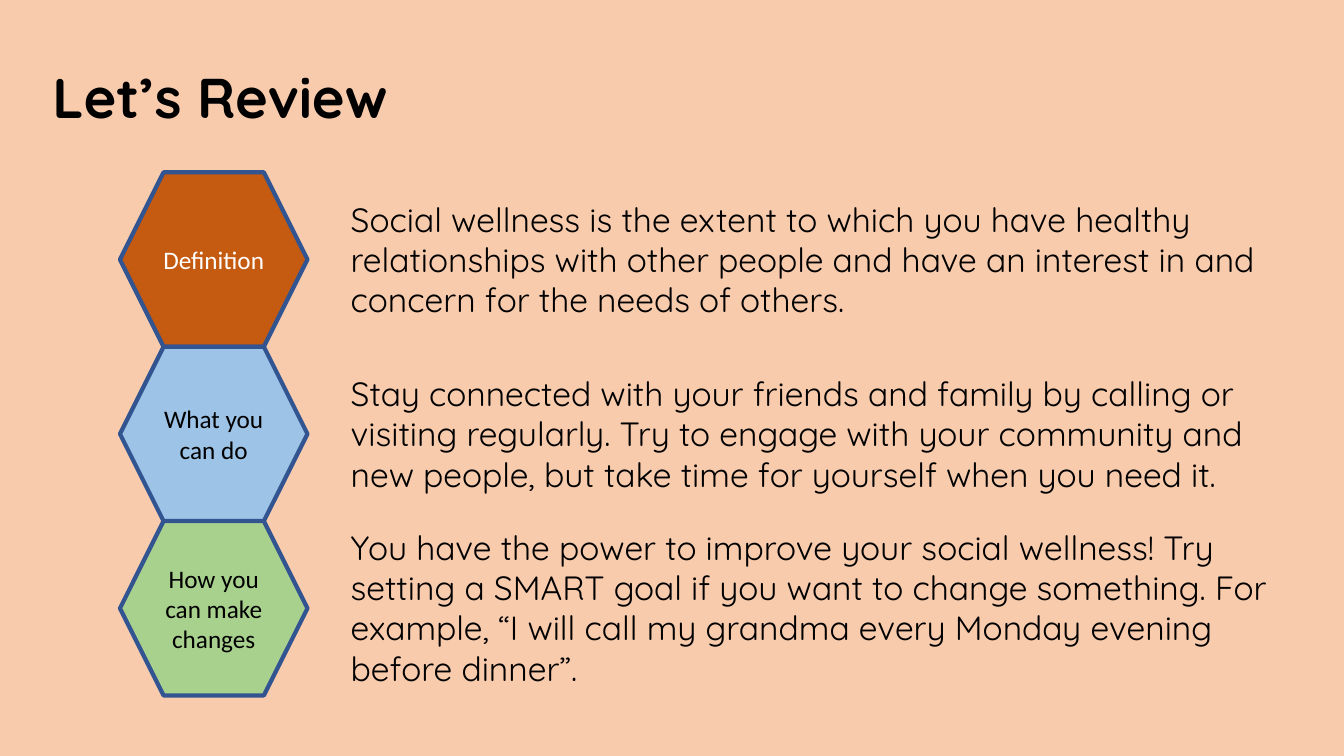
from pptx import Presentation
from pptx import util as u
from pptx.dml.color import RGBColor
from pptx.enum import shapes, text

COLORS = {
    "background": "F8CBAD",
    "outline": "325491",
    "orange": "C55A11",
    "blue": "9DC3E6",
    "green": "A9D18E",
    "black": "000000",
    "white": "FFFFFF",
}


def write_text(shape, content, size, font="Quicksand", color="black", bold=False,
               align=text.PP_ALIGN.LEFT, anchor=text.MSO_ANCHOR.TOP):
    frame = shape.text_frame
    frame.word_wrap = True
    frame.auto_size = text.MSO_AUTO_SIZE.NONE
    frame.vertical_anchor = anchor
    paragraph = frame.paragraphs[0]
    paragraph.alignment = align
    paragraph.line_spacing = 1.0
    run = paragraph.add_run()
    run.text = content
    run.font.name = font
    run.font.size = u.Pt(size)
    run.font.bold = bold
    run.font.color.rgb = RGBColor.from_string(COLORS[color])


presentation = Presentation()
presentation.slide_width = u.Inches(13.33)
presentation.slide_height = u.Inches(7.5)
slide = presentation.slides.add_slide(presentation.slide_layouts[5])
slide.background.fill.solid()
slide.background.fill.fore_color.rgb = RGBColor.from_string(COLORS["background"])

# Title
title = slide.shapes.title
title.left, title.top = u.Inches(0.42), u.Inches(0.57)
title.width, title.height = u.Inches(11.56), u.Inches(0.77)
write_text(title, "Let’s Review", 40, bold=True)

# Review rows: label, hexagon fill, label color, summary, summary height
rows = [
    ("Definition", "orange", "white",
     "Social wellness is the extent to which you have healthy relationships with "
     "other people and have an interest in and concern for the needs of others.", 1.31),
    ("What you can do", "blue", "black",
     "Stay connected with your friends and family by calling or visiting regularly. "
     "Try to engage with your community and new people, but take time for yourself "
     "when you need it.", 1.31),
    ("How you can make changes", "green", "black",
     "You have the power to improve your social wellness! Try setting a SMART goal "
     "if you want to change something. For example, “I will call my grandma every "
     "Monday evening before dinner”.", 1.72),
]
first_top = u.Inches(1.71)
hexagon_height = u.Inches(1.73)

for index, (label, fill, label_color, summary, summary_height) in enumerate(rows):
    top = first_top + index * hexagon_height

    # Stacked hexagon
    hexagon = slide.shapes.add_shape(shapes.MSO_SHAPE.HEXAGON, u.Inches(1.19), top,
                                     u.Inches(1.86), hexagon_height)
    hexagon.shadow.inherit = False
    hexagon.fill.solid()
    hexagon.fill.fore_color.rgb = RGBColor.from_string(COLORS[fill])
    hexagon.line.color.rgb = RGBColor.from_string(COLORS["outline"])
    hexagon.line.width = u.Pt(3)
    write_text(hexagon, label, 18, font="Calibri", color=label_color,
               align=text.PP_ALIGN.CENTER, anchor=text.MSO_ANCHOR.MIDDLE)

    # Summary centred on its hexagon
    height = u.Inches(summary_height)
    box = slide.shapes.add_textbox(u.Inches(3.38), top + (hexagon_height - height) // 2,
                                   u.Inches(9.47), height)
    write_text(box, summary, 24)

presentation.save("out.pptx")
